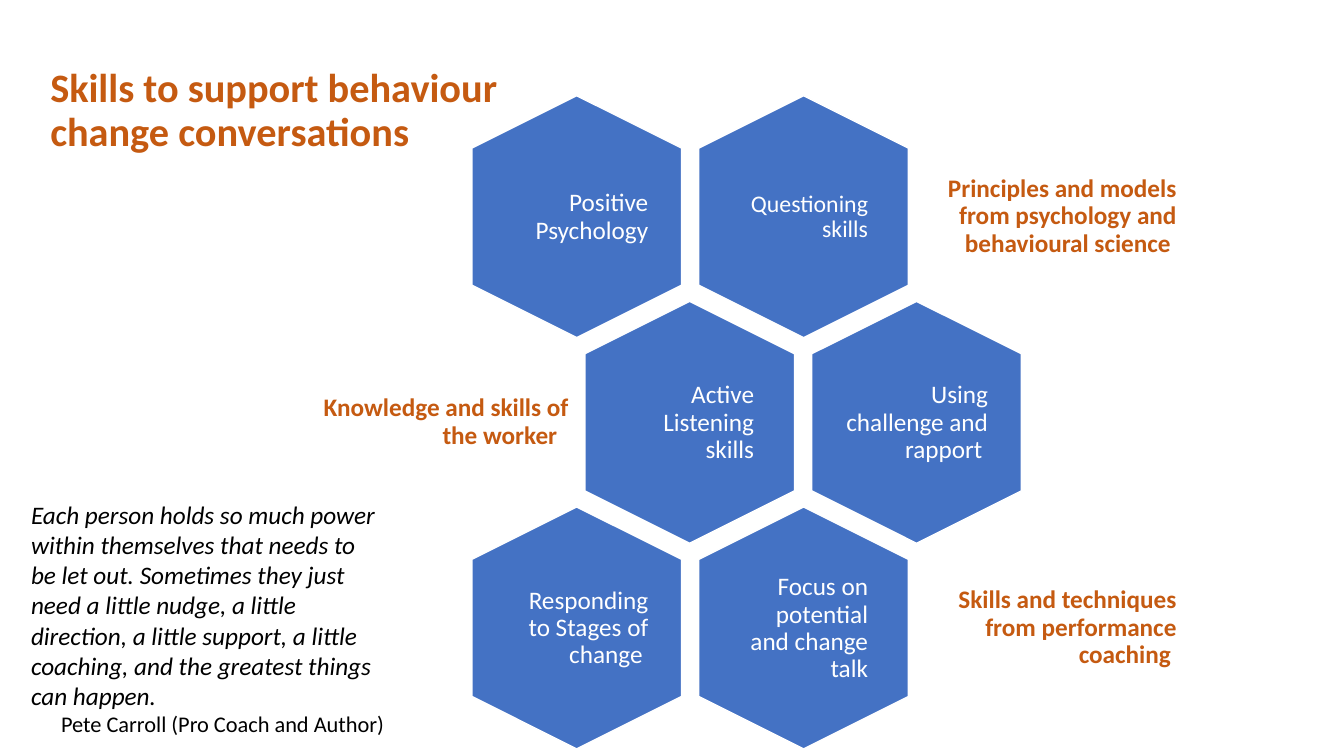
from pptx import Presentation
from pptx.dml.color import RGBColor
from pptx.enum.shapes import MSO_SHAPE
from pptx.enum.text import MSO_ANCHOR, PP_ALIGN
from pptx.util import Pt

PX = 9144
HEXAGON = MSO_SHAPE.HEXAGON
TOP, MIDDLE = MSO_ANCHOR.TOP, MSO_ANCHOR.MIDDLE
LEFT, RIGHT = PP_ALIGN.LEFT, PP_ALIGN.RIGHT
COLORS = {"orange": "C55A11", "blue": "4472C4", "white": "FFFFFF", "black": "000000"}

HEX_LENGTH, HEX_WIDTH = 240, 208
COLUMN_STEP, ROW_STEP = 225, 204
FIRST_TOP = 111

deck = Presentation()
deck.slide_width, deck.slide_height = 1333 * PX, 750 * PX
page = deck.slides.add_slide(deck.slide_layouts[6])


def add_text(text, left, top, width, height, size=18, color="white", bold=False,
             italic=False, align=RIGHT, anchor=MIDDLE, spacing=0.9, inset=7):
    box = page.shapes.add_textbox(left * PX, top * PX, width * PX, height * PX)
    frame = box.text_frame
    frame.word_wrap = True
    frame.vertical_anchor = anchor
    if inset is not None:
        frame.margin_left = frame.margin_right = inset * PX
        frame.margin_top = frame.margin_bottom = inset * PX
    para = frame.paragraphs[0]
    para.alignment = align
    para.line_spacing = spacing
    span = para.add_run()
    span.text = text
    span.font.name = "Calibri"
    span.font.size = Pt(size)
    span.font.bold = bold
    span.font.italic = italic
    span.font.color.rgb = RGBColor.from_string(COLORS[color])
    return frame


add_text("Skills to support behaviour change conversations", 40, 38, 482, 145,
         size=28.8, color="orange", bold=True, align=LEFT, inset=None)

rows = [
    (452, [("Positive Psychology", 18, 0), ("Questioning skills", 17, 7)],
     ("Principles and models from psychology and behavioural science ", 907, 267)),
    (564, [("Active Listening skills", 18, 7), ("Using challenge and rapport ", 18, 0)],
     ("Knowledge and skills of the worker  ", 312, 259)),
    (452, [("Responding to Stages of change ", 18, 0),
           ("Focus on potential and change talk", 18, 7)],
     ("Skills and techniques from performance coaching ", 907, 267)),
]

for row, (first_left, skills, (caption, caption_left, caption_width)) in enumerate(rows):
    top = FIRST_TOP + row * ROW_STEP
    for column, (skill, size, inset) in enumerate(skills):
        left = first_left + column * COLUMN_STEP
        hexagon = page.shapes.add_shape(HEXAGON, left * PX, top * PX,
                                        HEX_LENGTH * PX, HEX_WIDTH * PX)
        hexagon.rotation = 90
        hexagon.shadow.inherit = False
        hexagon.fill.solid()
        hexagon.fill.fore_color.rgb = RGBColor.from_string(COLORS["blue"])
        hexagon.line.color.rgb = RGBColor.from_string(COLORS["white"])
        hexagon.line.width = Pt(1)
        add_text(skill, left + 48, top + 22, 143, 165, size=size, inset=inset)
    add_text(caption, caption_left, top + 32, caption_width, 144,
             color="orange", bold=True)

quote = add_text(
    "Each person holds so much power within themselves that needs to be let out. "
    "Sometimes they just need a little nudge, a little direction, a little support, "
    "a little coaching, and the greatest things can happen.",
    21, 490, 370, 249, color="black", italic=True, align=LEFT, anchor=TOP,
    spacing=1.0, inset=None)
author = quote.add_paragraph()
author.alignment = RIGHT
span = author.add_run()
span.text = "Pete Carroll (Pro Coach and Author)"
span.font.name = "Calibri"
span.font.size = Pt(16)
span.font.color.rgb = RGBColor.from_string(COLORS["black"])

deck.save("out.pptx")
